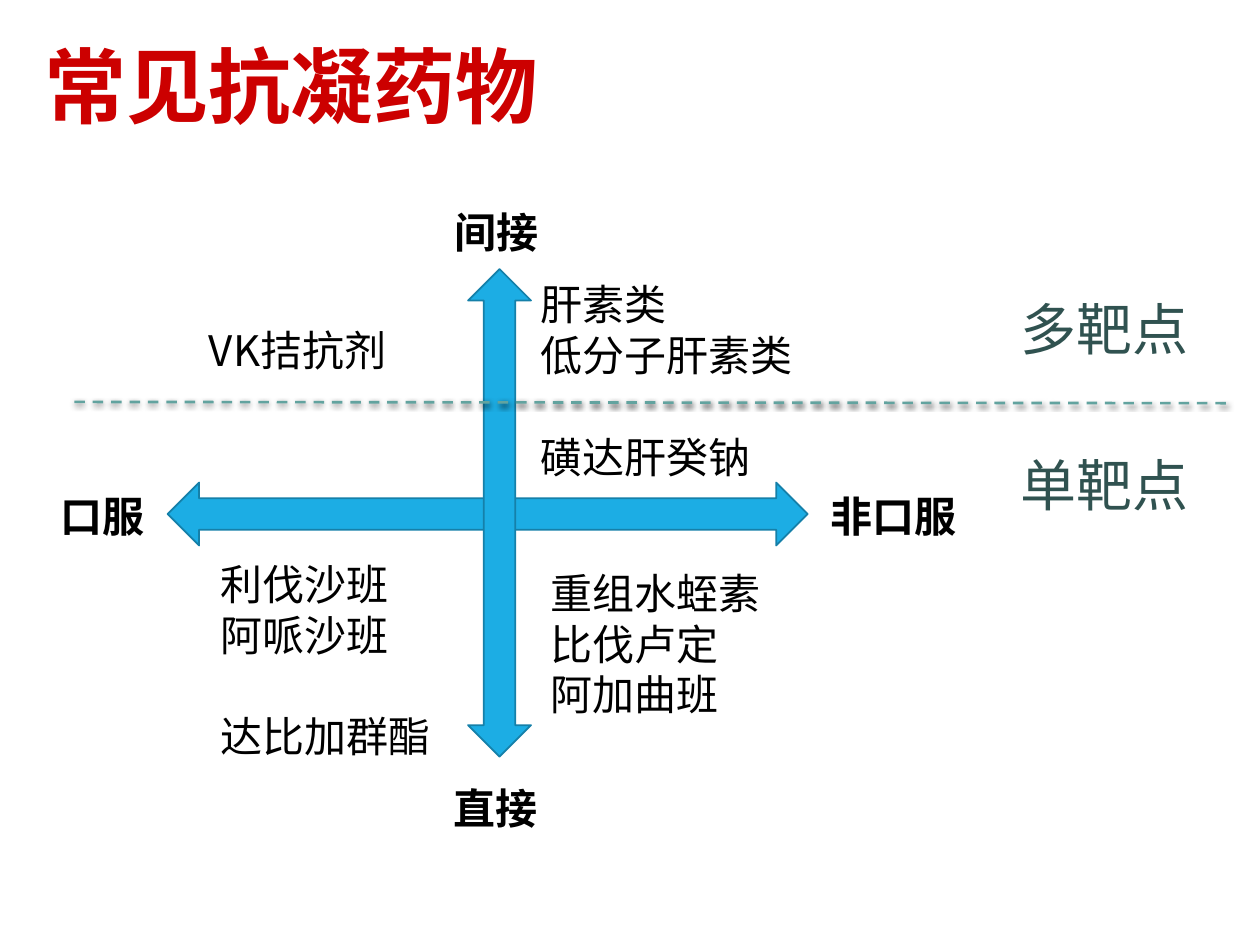
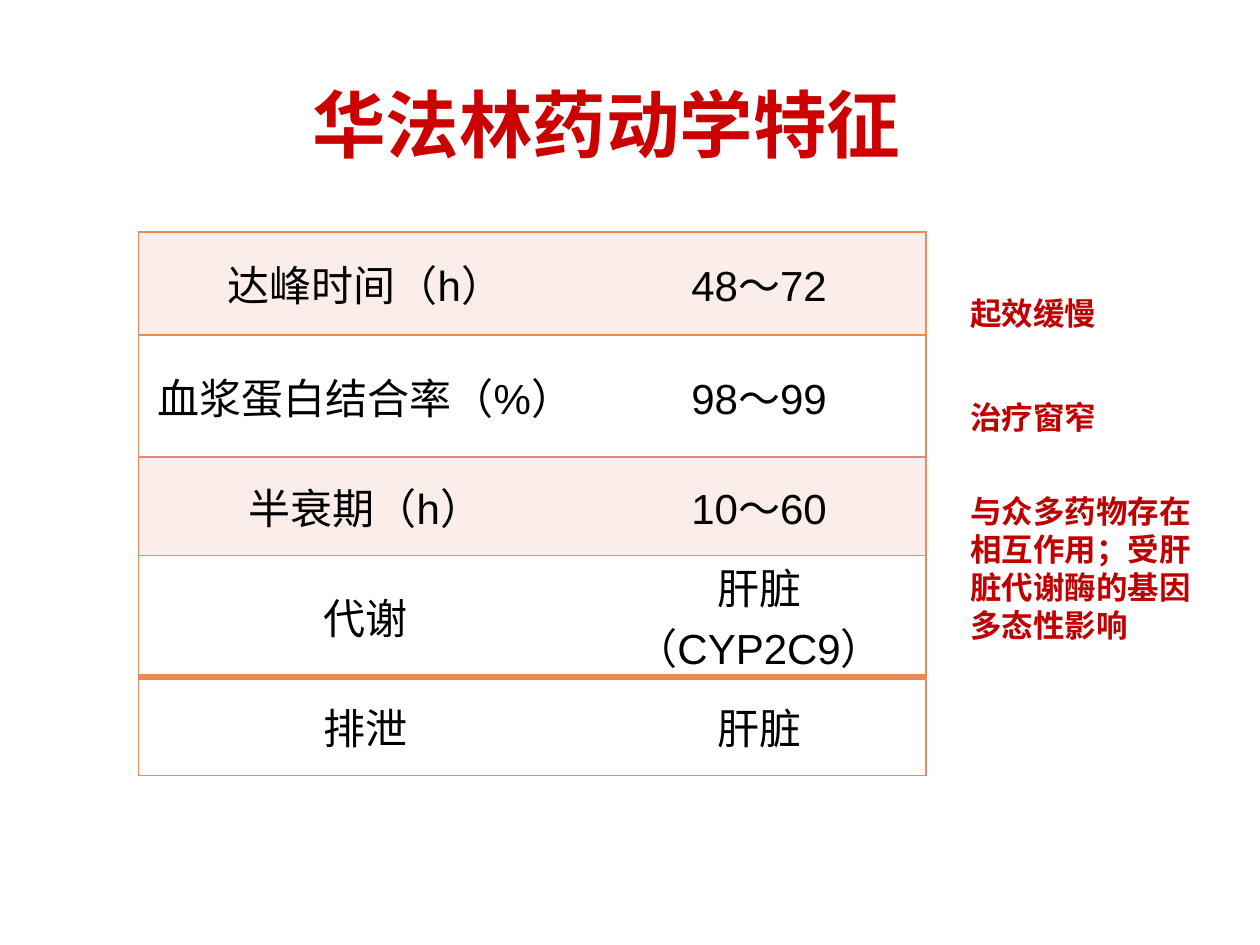
"""Build two slides on anticoagulant drugs: a quadrant chart and a table."""
from dataclasses import dataclass
from typing import Any, Optional

from lxml import etree
from pptx import Presentation
from pptx.dml.color import RGBColor
from pptx.enum.dml import MSO_LINE
from pptx.enum.shapes import MSO_CONNECTOR, MSO_SHAPE
from pptx.enum.text import MSO_ANCHOR, MSO_AUTO_SIZE, PP_ALIGN
from pptx.oxml.ns import qn
from pptx.util import Inches, Pt

ARROW = MSO_SHAPE.LEFT_RIGHT_ARROW
STRAIGHT = MSO_CONNECTOR.STRAIGHT
DASH = MSO_LINE.DASH
MIDDLE = MSO_ANCHOR.MIDDLE
FIXED = MSO_AUTO_SIZE.NONE
LEFT, CENTER = PP_ALIGN.LEFT, PP_ALIGN.CENTER
TITLE_ONLY = 5
LEADING = 1.21

COLORS = {
    "black": "000000", "white": "FFFFFF", "title": "CC0000", "note": "C00000",
    "arrow": "1CADE4", "edge": "1580A9", "dash": "62A39F", "target": "305250",
    "band": "FAEDEA", "rule": "E78A5C",
}
CJK, ARIAL, HEAD = "Noto Sans CJK SC", "Arial", "Quicksand"


@dataclass(frozen=True)
class Style:
    size: float
    color: str = "black"
    bold: bool = False
    face: str = CJK


@dataclass(frozen=True)
class Label:
    left: float
    top: float
    width: float
    height: float
    lines: tuple[str, ...]
    style: Style
    gap_at: Optional[int] = None


@dataclass(frozen=True)
class Arrow:
    left: float
    top: float
    width: float
    turn: int = 0


AXIS = Style(24, bold=True)
DRUG = Style(24)
TARGET = Style(32, "target")
NOTE = Style(18, "note", True)
CELL = Style(24, face=ARIAL)

ARROWS = (Arrow(1.33, 3.83, 5.08), Arrow(2.03, 3.82, 3.87, 270))
LABELS = (
    Label(3.5, 6.13, 0.96, 0.51, ("直接",), AXIS),
    Label(3.51, 1.56, 0.96, 0.51, ("间接",), AXIS),
    Label(0.38, 3.81, 0.96, 0.51, ("口服",), AXIS),
    Label(6.49, 3.81, 1.34, 0.51, ("非口服",), AXIS),
    Label(1.56, 2.49, 1.92, 0.5, ("VK拮抗剂",), DRUG),
    Label(4.27, 4.42, 2.31, 1.31, ("重组水蛭素", "比伐卢定", "阿加曲班"), DRUG),
    Label(4.19, 2.13, 2.42, 1.72, ("肝素类", "低分子肝素类", "磺达肝癸钠"), DRUG, 2),
    Label(1.65, 4.35, 2.31, 1.72, ("利伐沙班", "阿哌沙班", "达比加群酯"), DRUG, 2),
    Label(8, 2.25, 1.62, 0.64, ("多靶点",), TARGET),
    Label(8, 3.49, 1.62, 0.64, ("单靶点",), TARGET),
)
NOTES = (
    Label(7.6, 2.25, 2.11, 0.4, ("起效缓慢",), NOTE),
    Label(7.6, 3.08, 2.11, 0.4, ("治疗窗窄",), NOTE),
    Label(7.6, 3.82, 2.11, 1.31,
          ("与众多药物存在相互作用；受肝脏代谢酶的基因多态性影响",), NOTE),
)
ROWS = (
    ("达峰时间（h）", "48～72", 0.82, "band"),
    ("血浆蛋白结合率（%）", "98～99", 0.82, "white"),
    ("半衰期（h）", "10～60", 0.78, "band"),
    ("代谢", "肝脏（CYP2C9）", 0.78, "white"),
    ("排泄", "肝脏", 0.78, "white"),
)
WIDTHS = (3.6, 2.65)
THICK_ROW = 4


def rgb(name: str) -> RGBColor:
    return RGBColor.from_string(COLORS[name])


def set_font(para: Any, style: Style) -> None:
    font = para.font
    font.size, font.bold, font.name = Pt(style.size), style.bold, style.face
    font.color.rgb = rgb(style.color)
    props = para._p.pPr.find(qn("a:defRPr"))
    etree.SubElement(props, qn("a:ea"), typeface=CJK)


def add_title(slide: Any, text: str, box: tuple[float, ...], size: float,
              align: PP_ALIGN) -> None:
    title = slide.shapes.title
    title.left, title.top, title.width, title.height = map(Inches, box)
    frame = title.text_frame
    frame.text = text
    frame.auto_size, frame.vertical_anchor = FIXED, MIDDLE
    para = frame.paragraphs[0]
    para.alignment = align
    set_font(para, Style(size, "title", True, HEAD))


def add_label(slide: Any, label: Label) -> None:
    box = slide.shapes.add_textbox(Inches(label.left), Inches(label.top),
                                   Inches(label.width), Inches(label.height))
    frame = box.text_frame
    frame.word_wrap = True
    frame.margin_top = Inches(0.08)
    frame.text = "\n".join(label.lines)
    pitch = Pt(round(label.style.size * LEADING, 1))
    for index, para in enumerate(frame.paragraphs):
        para.line_spacing = pitch
        if index == label.gap_at:
            para.space_before = pitch
        set_font(para, label.style)


def add_arrow(slide: Any, arrow: Arrow) -> None:
    shape = slide.shapes.add_shape(ARROW, Inches(arrow.left), Inches(arrow.top),
                                   Inches(arrow.width), Inches(0.5))
    shape.rotation = arrow.turn
    shape.shadow.inherit = False
    shape.fill.solid()
    shape.fill.fore_color.rgb = rgb("arrow")
    shape.line.color.rgb = rgb("edge")
    shape.line.width = Pt(1)


def add_split(slide: Any) -> None:
    split = slide.shapes.add_connector(STRAIGHT, Inches(0.59), Inches(3.19),
                                       Inches(9.79), Inches(3.2))
    split.line.color.rgb = rgb("dash")
    split.line.width = Pt(1.5)
    split.line.dash_style = DASH
    effects = etree.SubElement(split._element.spPr, qn("a:effectLst"))
    shade = etree.SubElement(effects, qn("a:outerShdw"), blurRad=str(Pt(3)),
                             dist=str(Pt(1)), dir="5400000", rotWithShape="0")
    color = etree.SubElement(shade, qn("a:srgbClr"), val=COLORS["black"])
    etree.SubElement(color, qn("a:alpha"), val="63000")


def set_edges(cell: Any, edges: dict[str, float]) -> None:
    props = cell._tc.get_or_add_tcPr()
    for place, side in enumerate("LRTB"):
        width = edges.get(side, 0)
        line = etree.Element(qn(f"a:ln{side}"), w=str(Pt(width)))
        if width:
            fill = etree.SubElement(line, qn("a:solidFill"))
            etree.SubElement(fill, qn("a:srgbClr"), val=COLORS["rule"])
        else:
            etree.SubElement(line, qn("a:noFill"))
        props.insert(place, line)


def fill_cell(cell: Any, text: str, fill: str) -> None:
    cell.text = text
    cell.vertical_anchor = MIDDLE
    cell.margin_left = cell.margin_right = Inches(0.07)
    cell.margin_top = cell.margin_bottom = 0
    cell.fill.solid()
    cell.fill.fore_color.rgb = rgb(fill)
    para = cell.text_frame.paragraphs[0]
    para.alignment = CENTER
    set_font(para, CELL)


def add_grid(slide: Any) -> None:
    height = sum(row[2] for row in ROWS)
    table = slide.shapes.add_table(len(ROWS), len(WIDTHS), Inches(1.1), Inches(1.84),
                                   Inches(sum(WIDTHS)), Inches(height)).table
    table.first_row = table.horz_banding = False
    for column, width in zip(table.columns, WIDTHS):
        column.width = Inches(width)
    for index, (name, value, tall, fill) in enumerate(ROWS):
        table.rows[index].height = Inches(tall)
        edges = {"T": 4 if index == THICK_ROW else 1,
                 "B": 4 if index + 1 == THICK_ROW else 1}
        for col, (text, side) in enumerate(((name, "L"), (value, "R"))):
            cell = table.cell(index, col)
            fill_cell(cell, text, fill)
            set_edges(cell, {**edges, side: 1})


def main() -> None:
    deck = Presentation()
    deck.slide_width, deck.slide_height = Inches(10), Inches(7.5)
    layout = deck.slide_layouts[TITLE_ONLY]

    drugs = deck.slides.add_slide(layout)
    add_title(drugs, "常见抗凝药物", (0.25, 0.17, 9.18, 1), 47, LEFT)
    for arrow in ARROWS:
        add_arrow(drugs, arrow)
    for label in LABELS:
        add_label(drugs, label)
    add_split(drugs)

    traits = deck.slides.add_slide(layout)
    add_title(traits, "华法林药动学特征", (0.31, 0.55, 9, 0.85), 42, CENTER)
    add_grid(traits)
    for note in NOTES:
        add_label(traits, note)

    deck.save("out.pptx")


if __name__ == "__main__":
    main()
